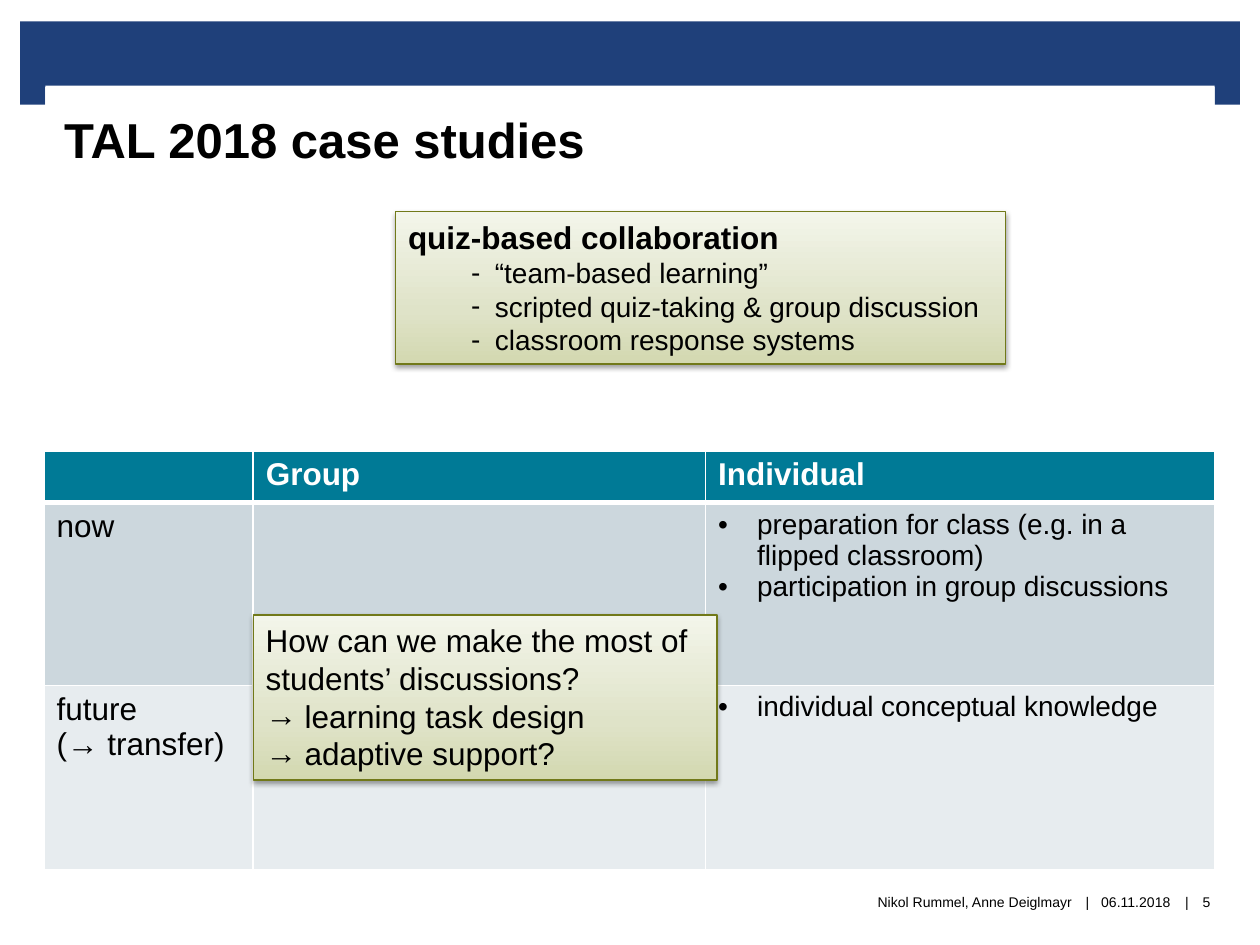
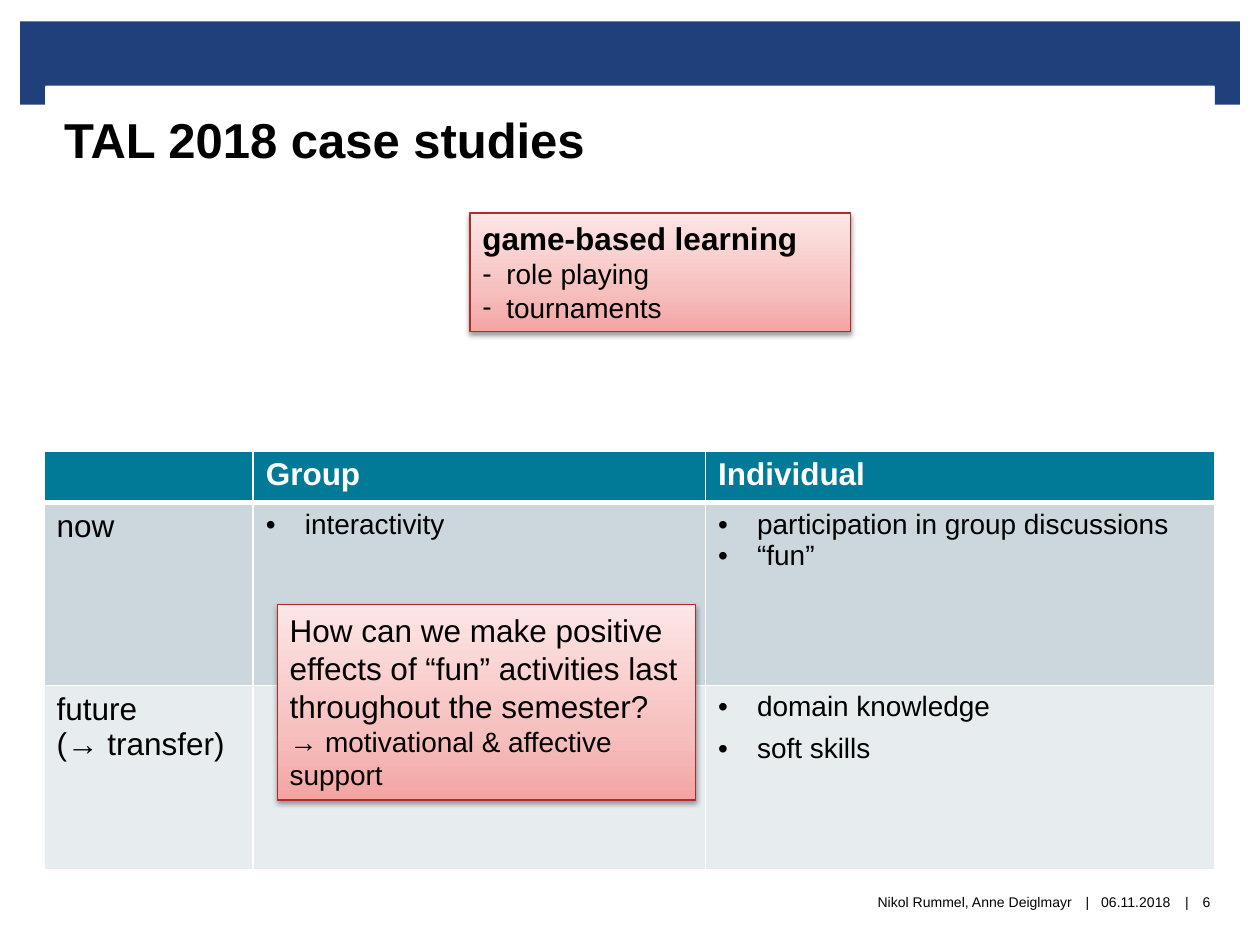
from pptx import Presentation
from pptx.dml.color import RGBColor
from pptx.enum.shapes import MSO_SHAPE
from pptx.enum.text import MSO_ANCHOR, MSO_AUTO_SIZE, PP_ALIGN
from pptx.oxml import parse_xml
from pptx.oxml.ns import nsdecls, qn
from pptx.util import Inches, Pt

FONT = "Arial"
BLACK = RGBColor(0x00, 0x00, 0x00)
WHITE = RGBColor(0xFF, 0xFF, 0xFF)
NAVY = RGBColor(0x1F, 0x40, 0x7A)
TEAL = RGBColor(0x00, 0x7A, 0x96)
ROW_FILLS = [TEAL, RGBColor(0xCC, 0xD7, 0xDD), RGBColor(0xE7, 0xEC, 0xEF)]

# Callout themes: line colour, then gradient colours from bottom to top
GREEN = (RGBColor(0x71, 0x79, 0x19),
         [RGBColor(0xD3, 0xD8, 0xB0), RGBColor(0xDF, 0xE3, 0xC8), RGBColor(0xF3, 0xF5, 0xEA)])
RED = (RGBColor(0xA7, 0x2E, 0x29),
       [RGBColor(0xF4, 0xA4, 0xA3), RGBColor(0xF6, 0xC0, 0xBF), RGBColor(0xFD, 0xE6, 0xE6)])
GRADIENT_STOPS = [0, 35, 100]

TABLE_BOX = (0.35, 3.58, 9.29, 3.32)
COLUMN_WIDTHS = [1.66, 3.59, 4.04]
ROW_HEIGHTS = [0.41, 1.45, 1.46]


def line(text, size=18, bold=False, bullet=None, left=0.0, hanging=0.0, after=0):
    """Describe one paragraph."""
    return dict(text=text, size=size, bold=bold, bullet=bullet, left=left,
                hanging=hanging, after=after)


def dot(text, after=0):
    return line(text, 16, bullet="•", left=0.31, hanging=0.31, after=after)


def dash(text, left=0.19):
    return line(text, 16, bullet="-", left=left, hanging=0.19)


def arrow(text):
    return line(text, bullet="→", left=0.31, hanging=0.31)


def write_lines(text_frame, lines, color=BLACK, align=PP_ALIGN.LEFT):
    for index, item in enumerate(lines):
        paragraph = text_frame.paragraphs[0] if index == 0 else text_frame.add_paragraph()
        paragraph.text = item["text"]
        paragraph.alignment = align
        paragraph.space_after = Pt(item["after"])
        if item["bullet"]:
            properties = paragraph._p.get_or_add_pPr()
            properties.set("marL", str(Inches(item["left"])))
            properties.set("indent", str(-Inches(item["hanging"])))
            properties.append(parse_xml(f'<a:buFont {nsdecls("a")} typeface="{FONT}"/>'))
            properties.append(parse_xml(f'<a:buChar {nsdecls("a")} char="{item["bullet"]}"/>'))
        font = paragraph.font
        font.name, font.size, font.bold = FONT, Pt(item["size"]), item["bold"]
        font.color.rgb = color


def add_rectangle(slide, box):
    shape = slide.shapes.add_shape(MSO_SHAPE.RECTANGLE, *map(Inches, box))
    shape.shadow.inherit = False
    return shape


def add_text(slide, box, item, align, anchor=MSO_ANCHOR.MIDDLE, margins=(0, 0)):
    text_box = slide.shapes.add_textbox(*map(Inches, box))
    text_frame = text_box.text_frame
    text_frame.word_wrap = True
    text_frame.vertical_anchor = anchor
    text_frame.margin_left, text_frame.margin_right = map(Inches, margins)
    text_frame.margin_top = text_frame.margin_bottom = 0
    write_lines(text_frame, [item], align=align)
    return text_box


def add_header(slide, box, title):
    left, top, width = box
    leg_width = 0.2
    # Band with a short leg at each end
    for part in [(left, top, width, 0.52),
                 (left, top + 0.48, leg_width, 0.18),
                 (left + width - leg_width, top + 0.48, leg_width, 0.18)]:
        band = add_rectangle(slide, part)
        band.fill.solid()
        band.fill.fore_color.rgb = NAVY
        band.line.fill.background()
    # Title between the legs
    title_box = add_text(slide, (left + leg_width, top + 0.51, width - 2 * leg_width, 0.66),
                         line(title, 28, bold=True), PP_ALIGN.LEFT,
                         MSO_ANCHOR.BOTTOM, (0.15, 0.16))
    title_box.fill.solid()
    title_box.fill.fore_color.rgb = WHITE


def add_footer(slide, box, number):
    left, top, height = box
    for offset, width, text, align in [
            (0, 3.51, "Nikol Rummel, Anne Deiglmayr", PP_ALIGN.RIGHT),
            (3.57, 0.12, "|", PP_ALIGN.CENTER),
            (3.68, 0.67, "06.11.2018", PP_ALIGN.CENTER),
            (4.36, 0.12, "|", PP_ALIGN.CENTER),
            (4.43, 0.29, str(number), PP_ALIGN.CENTER)]:
        add_text(slide, (left + offset, top, width, height), line(text, 8), align)


def set_borders(cell, bottom_width):
    properties = cell._tc.get_or_add_tcPr()
    for side, width in [("L", 1), ("R", 1), ("T", 1), ("B", bottom_width)]:
        properties.append(parse_xml(
            f'<a:ln{side} {nsdecls("a")} w="{Pt(width)}"><a:solidFill>'
            f'<a:srgbClr val="{WHITE}"/></a:solidFill></a:ln{side}>'))


def add_effects_table(slide, box, now, future):
    """Fill the grid; now and future each hold group and individual lines."""
    rows = [
        [[], [line("Group", bold=True)], [line("Individual", bold=True)]],
        [[line("now")], *now],
        [[line("future"), line("(→ transfer)")], *future],
    ]
    table = slide.shapes.add_table(len(rows), len(COLUMN_WIDTHS), *map(Inches, box)).table
    table.horz_banding = False
    for column, width in zip(table.columns, COLUMN_WIDTHS):
        column.width = Inches(width)
    for row_index, row in enumerate(rows):
        table.rows[row_index].height = Inches(ROW_HEIGHTS[row_index])
        is_header = row_index == 0
        for column_index, lines in enumerate(row):
            cell = table.cell(row_index, column_index)
            set_borders(cell, 3 if is_header else 1)
            cell.fill.solid()
            cell.fill.fore_color.rgb = ROW_FILLS[row_index]
            write_lines(cell.text_frame, lines, WHITE if is_header else BLACK)


def add_callout(slide, box, theme, lines):
    line_color, gradient = theme
    shape = add_rectangle(slide, box)
    shape.line.color.rgb = line_color
    shape.line.width = Pt(0.75)
    # Three-stop gradient running upwards
    stops = "".join(f'<a:gs pos="{position * 1000}"><a:srgbClr val="{color}"/></a:gs>'
                    for position, color in zip(GRADIENT_STOPS, gradient))
    properties = shape._element.spPr
    properties.find(qn("a:prstGeom")).addnext(parse_xml(
        f'<a:gradFill {nsdecls("a")} rotWithShape="1"><a:gsLst>{stops}</a:gsLst>'
        '<a:lin ang="16200000" scaled="0"/></a:gradFill>'))
    # Soft shadow below
    properties.find(qn("a:effectLst")).append(parse_xml(
        f'<a:outerShdw {nsdecls("a")} blurRad="{Pt(3.1)}" dist="{Pt(1.6)}" dir="5400000" '
        f'rotWithShape="0"><a:srgbClr val="{BLACK}"><a:alpha val="38000"/></a:srgbClr>'
        '</a:outerShdw>'))
    text_frame = shape.text_frame
    text_frame.word_wrap = True
    text_frame.auto_size = MSO_AUTO_SIZE.SHAPE_TO_FIT_TEXT
    text_frame.vertical_anchor = MSO_ANCHOR.TOP
    write_lines(text_frame, lines)


def add_case_study(presentation, number, theme, now, future, callouts):
    slide = presentation.slides.add_slide(presentation.slide_layouts[6])
    add_header(slide, (0.16, 0.17, 9.68), "TAL 2018 case studies")
    add_footer(slide, (5, 6.9, 0.51), number)
    add_effects_table(slide, TABLE_BOX, now, future)
    for box, lines in callouts:
        add_callout(slide, box, theme, lines)


def main():
    presentation = Presentation()
    presentation.slide_width, presentation.slide_height = Inches(10), Inches(7.5)

    add_case_study(
        presentation, 5, GREEN,
        now=[[], [dot("preparation for class (e.g. in a flipped classroom)"),
                  dot("participation in group discussions")]],
        future=[[], [dot("individual conceptual knowledge", after=6)]],
        callouts=[
            ((3.14, 1.68, 4.84, 1.21),
             [line("quiz-based collaboration", bold=True),
              dash("“team-based learning”", left=0.69),
              dash("scripted quiz-taking & group discussion", left=0.69),
              dash("classroom response systems", left=0.69)]),
            ((2.01, 4.88, 3.68, 1.31),
             [line("How can we make the most of students’ discussions?"),
              arrow("learning task design"),
              arrow("adaptive support?")]),
        ])

    add_case_study(
        presentation, 6, RED,
        now=[[dot("interactivity")],
             [dot("participation in group discussions"), dot("“fun”")]],
        future=[[], [dot("domain knowledge", after=6), dot("soft skills", after=6)]],
        callouts=[
            ((3.73, 1.69, 3.02, 0.94),
             [line("game-based learning", bold=True),
              dash("role playing"),
              dash("tournaments")]),
            ((2.2, 4.8, 3.32, 1.55),
             [line("How can we make positive effects of “fun” activities last "
                   "throughout the semester?"),
              line("→ motivational & affective support", 16)]),
        ])

    presentation.save("out.pptx")


if __name__ == "__main__":
    main()
